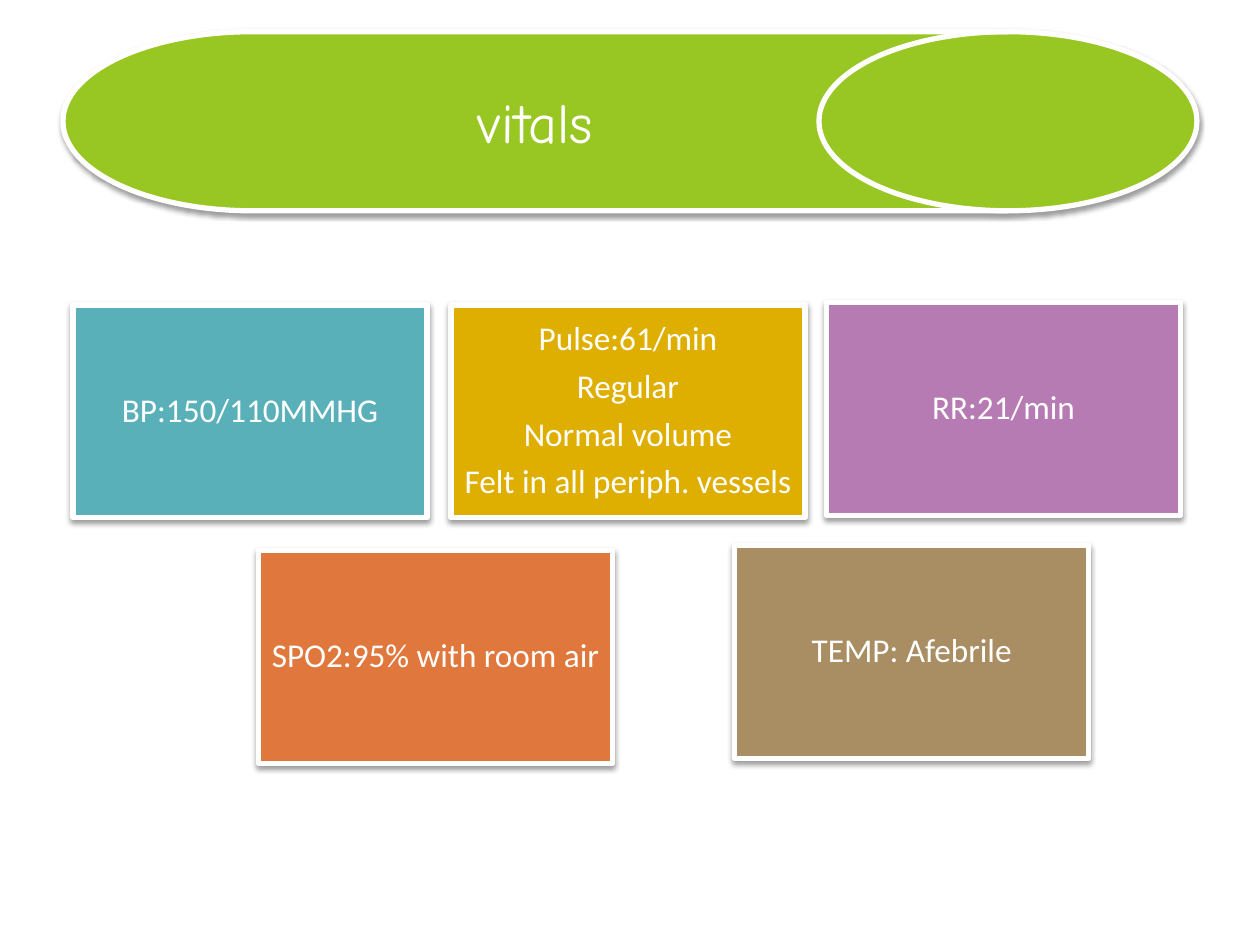
from lxml import etree
from pptx import Presentation
from pptx.dml.color import RGBColor
from pptx.enum.shapes import MSO_SHAPE
from pptx.enum.text import MSO_ANCHOR, PP_ALIGN
from pptx.oxml.ns import qn
from pptx.util import Cm, Pt

RECT = MSO_SHAPE.RECTANGLE
DRUM = MSO_SHAPE.FLOWCHART_DIRECT_ACCESS_STORAGE
MIDDLE = MSO_ANCHOR.MIDDLE
CENTER = PP_ALIGN.CENTER

COLORS = {
    "white": "FFFFFF", "black": "000000", "green": "98C723",
    "teal": "59B0B9", "gold": "DEAE00", "purple": "B77BB4",
    "orange": "E0773C", "brown": "A98D63",
}
CARD_W, CARD_H = 7.14, 4.29
CARDS = [
    (1.47, 6.15, "teal", ["BP:150/110MMHG"]),
    (9.09, 6.15, "gold", ["Pulse:61/min", "Regular", "Normal volume",
                          "Felt in all periph. vessels"]),
    (16.66, 6.1, "purple", ["RR:21/min"]),
    (5.21, 11.1, "orange", ["SPO2:95% with room air"]),
    (14.81, 11, "brown", ["TEMP: Afebrile"]),
]


def rgb(name):
    return RGBColor.from_string(COLORS[name])


def write(tf, lines, size, font, color="white", spacing=None, after=None):
    tf.word_wrap = True
    tf.vertical_anchor = MIDDLE
    for i, text in enumerate(lines):
        p = tf.paragraphs[0] if i == 0 else tf.add_paragraph()
        p.alignment = CENTER
        p.line_spacing = spacing
        p.space_after = after
        r = p.add_run()
        r.text = text
        r.font.size = Pt(size)
        r.font.name = font
        r.font.color.rgb = rgb(color)


class Deck:
    """Draws styled elements on the current slide."""

    def __init__(self, prs):
        self.s = prs.slides.add_slide(prs.slide_layouts[6])

    def shadow(self, sp):
        sp.shadow.inherit = False
        effects = sp._element.spPr.find(qn("a:effectLst"))
        outer = etree.SubElement(
            effects, qn("a:outerShdw"), blurRad=str(Pt(3.1)),
            dist=str(Pt(1.6)), dir="5400000", rotWithShape="0")
        color = etree.SubElement(outer, qn("a:srgbClr"), val=COLORS["black"])
        etree.SubElement(color, qn("a:alpha"), val="38000")

    def shape(self, kind, x, y, w, h, fill):
        sp = self.s.shapes.add_shape(kind, Cm(x), Cm(y), Cm(w), Cm(h))
        sp.fill.solid()
        sp.fill.fore_color.rgb = rgb(fill)
        sp.line.color.rgb = rgb("white")
        sp.line.width = Pt(3)
        self.shadow(sp)
        return sp

    def card(self, x, y, fill, lines):
        tf = self.shape(RECT, x, y, CARD_W, CARD_H, fill).text_frame
        tf.margin_left = tf.margin_right = Cm(0.2)
        tf.margin_top = tf.margin_bottom = Cm(0.2)
        write(tf, lines, 19, "Calibri", spacing=0.9, after=Pt(6.65))

    def title(self, text):
        sp = self.shape(DRUM, 1.27, 0.64, 22.86, 3.61, "green")
        write(sp.text_frame, [text], 32, "Comic Neue")


def main():
    prs = Presentation()
    prs.slide_width, prs.slide_height = Cm(25.4), Cm(19.05)
    deck = Deck(prs)
    for card in CARDS:
        deck.card(*card)
    deck.title("vitals")
    prs.save("out.pptx")


if __name__ == "__main__":
    main()
